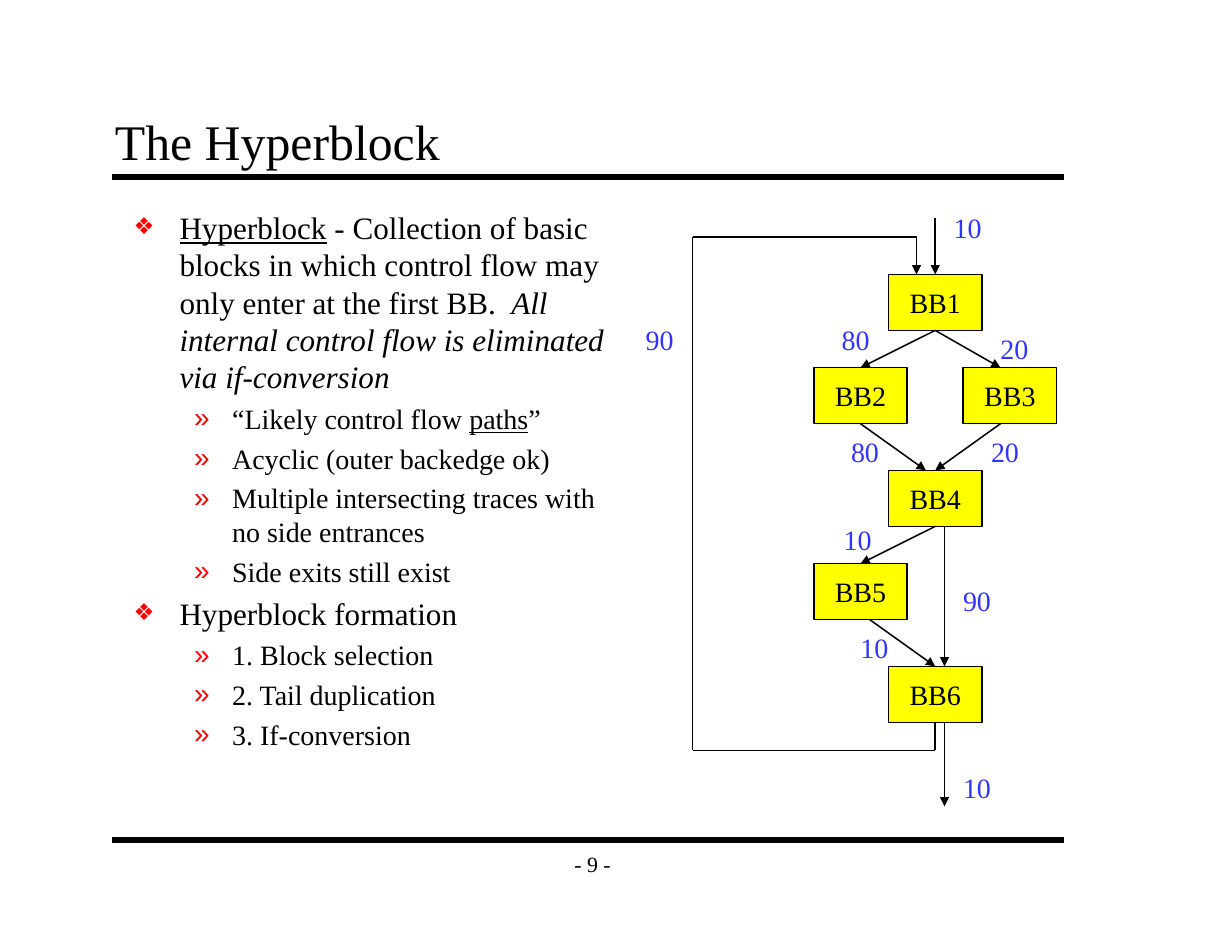
from lxml import etree
from pptx import Presentation
from pptx import util as u
from pptx.dml.color import RGBColor
from pptx.enum import shapes, text
from pptx.oxml.ns import qn

COLORS = {"ink": "000000", "block": "FFFF00", "count": "3333FF", "bullet": "FF0000"}
FONT = "Times New Roman"
CELL = u.Inches(1) / 12  # the slide is a grid of 132 columns by 102 rows
INSETS = (0.11, 0.06)


def grid(*cells):
    return [u.Emu(round(cell * CELL)) for cell in cells]


def color(name):
    return RGBColor.from_string(COLORS[name])


def add_runs(paragraph, runs, size=18, ink="ink"):
    """Add (text, style) pairs, where style may hold "u" and "i"."""
    for words, style in runs:
        run = paragraph.add_run()
        run.text = words
        run.font.name, run.font.size = FONT, u.Pt(size)
        run.font.color.rgb = color(ink)
        if "u" in style:
            run.font.underline = True
        if "i" in style:
            run.font.italic = True


def set_frame(frame, anchor=text.MSO_ANCHOR.TOP, wrap=False, insets=(0.1, 0.05)):
    frame.word_wrap, frame.vertical_anchor = wrap, anchor
    frame.margin_left = frame.margin_right = u.Inches(insets[0])
    frame.margin_top = frame.margin_bottom = u.Inches(insets[1])


def add_text(slide, box, words, size=18, ink="ink", align=None, **frame_format):
    frame = slide.shapes.add_textbox(*grid(*box)).text_frame
    set_frame(frame, **frame_format)
    paragraph = frame.paragraphs[0]
    paragraph.alignment = align
    add_runs(paragraph, [(words, "")], size, ink)


def add_line(slide, start, end, width=1, arrow=False):
    line = slide.shapes.add_connector(
        shapes.MSO_CONNECTOR.STRAIGHT, *grid(*start, *end))
    line.line.color.rgb = color("ink")
    line.line.width = u.Pt(width)
    if arrow:
        etree.SubElement(line.line._get_or_add_ln(), qn("a:tailEnd"), type="triangle")
    etree.SubElement(line._element.spPr, qn("a:effectLst"))


def add_bullet(paragraph, level):
    """Hanging bullet: a diamond on the first level, a guillemet on the second."""
    mark, left, hang, share = [("❖", 0.41, 0.41, 75), ("»", 0.88, 0.34, 100)][level]
    paragraph.level = level
    properties = paragraph._p.get_or_add_pPr()
    properties.set("marL", str(u.Inches(left)))
    properties.set("indent", str(-u.Inches(hang)))
    bullet_color = etree.SubElement(properties, qn("a:buClr"))
    etree.SubElement(bullet_color, qn("a:srgbClr"), val=COLORS["bullet"])
    etree.SubElement(properties, qn("a:buSzPct"), val=str(share * 1000))
    etree.SubElement(properties, qn("a:buFont"), typeface="Arial")
    etree.SubElement(properties, qn("a:buChar"), char=mark)


def build_frame(slide, left, top, width, height):
    """Title, the two rules and the page number."""
    add_text(slide, (left - 1, top - 8, width, 8), "The Hyperblock", size=32,
             anchor=text.MSO_ANCHOR.BOTTOM, wrap=True, insets=INSETS)
    for row in (top, top + height):
        add_line(slide, (left, row), (left + width, row), width=4)
    add_text(slide, (left + 47, top + height, 9, 5), "- 9 -", size=14,
             align=text.PP_ALIGN.CENTER, anchor=text.MSO_ANCHOR.MIDDLE, insets=INSETS)


def build_outline(slide, box):
    """Bulleted text as (level, runs)."""
    outline = [
        (0, [("Hyperblock", "u"),
             (" - Collection of basic blocks in which control flow may only enter "
              "at the first BB.", ""),
             ("  All internal control flow is eliminated via if-conversion", "i")]),
        (1, [("“Likely control flow ", ""), ("paths", "u"), ("”", "")]),
        (1, [("Acyclic (outer backedge ok)", "")]),
        (1, [("Multiple intersecting traces with no side entrances", "")]),
        (1, [("Side exits still exist", "")]),
        (0, [("Hyperblock formation", "")]),
        (1, [("1. Block selection", "")]),
        (1, [("2. Tail duplication", "")]),
        (1, [("3. If-conversion", "")]),
    ]
    frame = slide.shapes.add_textbox(*grid(*box)).text_frame
    set_frame(frame, wrap=True, insets=INSETS)
    for index, (level, runs) in enumerate(outline):
        paragraph = frame.add_paragraph() if index else frame.paragraphs[0]
        add_bullet(paragraph, level)
        paragraph.space_before = u.Pt(4 if index else 0)
        add_runs(paragraph, runs, size=18 if level else 20)


def add_block(slide, left, top, name):
    block = slide.shapes.add_shape(
        shapes.MSO_SHAPE.RECTANGLE, *grid(left, top, 10, 6))
    block.shadow.inherit = False
    block.fill.solid()
    block.fill.fore_color.rgb = color("block")
    block.line.color.rgb = color("ink")
    block.line.width = u.Pt(1)
    set_frame(block.text_frame, anchor=text.MSO_ANCHOR.MIDDLE)
    paragraph = block.text_frame.paragraphs[0]
    paragraph.alignment = text.PP_ALIGN.CENTER
    add_runs(paragraph, [(name, "")])


def build_flow_graph(slide, left, top):
    """Control flow graph; all cells count from its top left corner."""
    def place(point):
        return left + point[0], top + point[1]

    # Basic blocks
    blocks = {"BB1": (21, 6), "BB2": (13, 16), "BB3": (29, 16),
              "BB4": (21, 27), "BB5": (13, 37), "BB6": (21, 48)}
    for name, corner in blocks.items():
        add_block(slide, *place(corner), name)

    # Edges between blocks, entry and exit
    edges = [((26, 0), (26, 6)), ((26, 12), (18, 16)), ((26, 12), (33, 16)),
             ((18, 22), (25, 27)), ((33, 22), (26, 27)), ((26, 33), (18, 37)),
             ((19, 43), (26, 48)), ((27, 33), (27, 48)), ((27, 54), (27, 63))]
    for start, end in edges:
        add_line(slide, place(start), place(end), arrow=True)

    # Back edge from BB6 to BB1
    corners = [(26, 54), (26, 57), (0, 57), (0, 2), (24, 2), (24, 6)]
    for start, end in zip(corners, corners[1:]):
        add_line(slide, place(start), place(end), arrow=end == corners[-1])

    # Execution counts
    counts = [("10", 26.8, -1.4), ("90", -6.2, 10.6), ("80", 14.8, 10.6),
              ("20", 31.8, 11.5), ("80", 15.8, 22.6), ("20", 30.8, 22.6),
              ("10", 15, 32), ("90", 27.8, 38.5), ("10", 16.8, 43.6),
              ("10", 27.8, 58.6)]
    for count, column, row in counts:
        add_text(slide, (*place((column, row)), 5.4, 4.8), count, ink="count")


def main():
    presentation = Presentation()
    presentation.slide_width, presentation.slide_height = grid(132, 102)
    slide = presentation.slides.add_slide(presentation.slide_layouts[6])
    build_frame(slide, 12, 19, 102, 71)
    build_outline(slide, (13, 21.6, 55, 68.4))
    build_flow_graph(slide, 74.2, 23.4)
    presentation.save("out.pptx")


if __name__ == "__main__":
    main()
